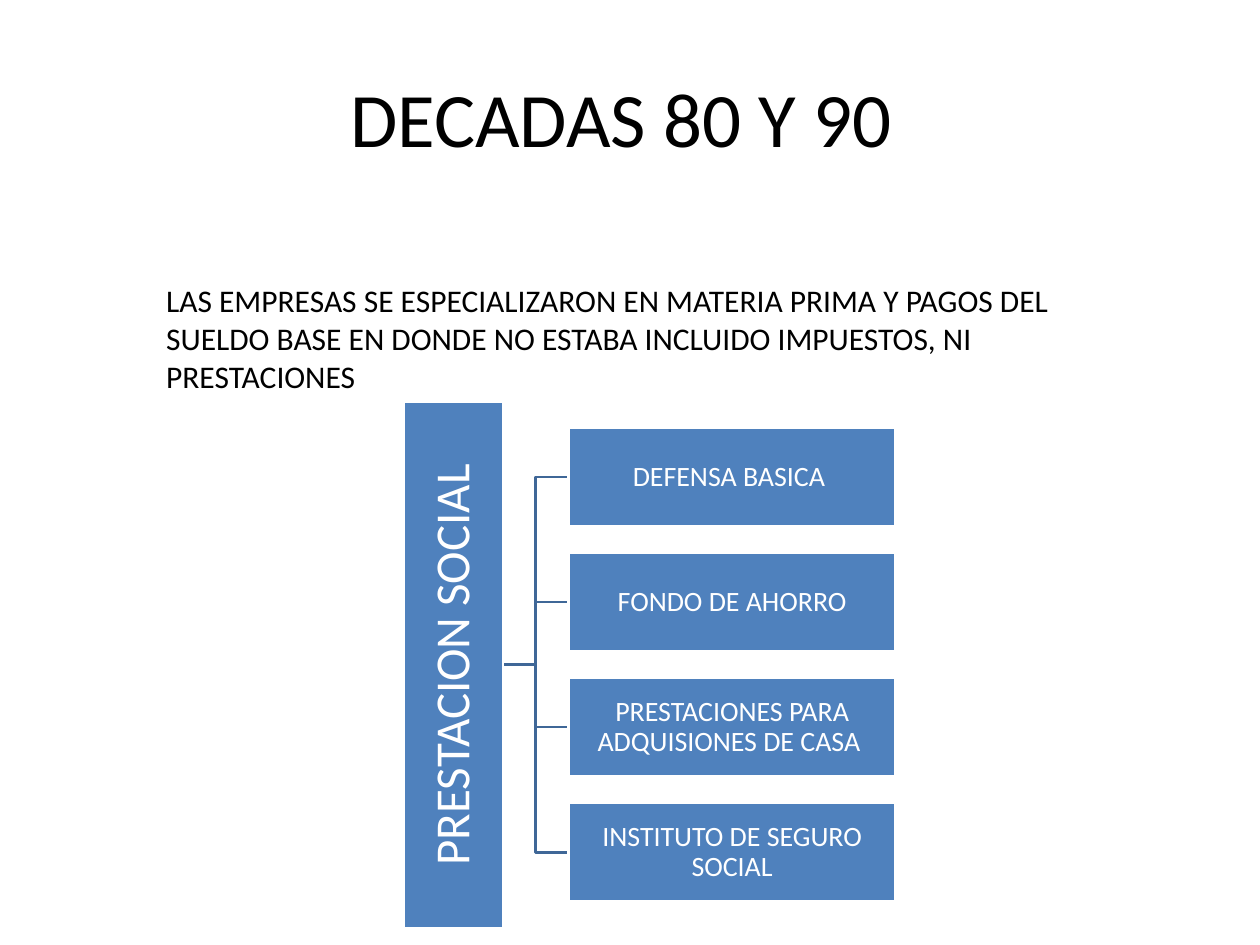
from pptx import Presentation
from pptx.dml.color import RGBColor
from pptx.enum.shapes import MSO_SHAPE
from pptx.enum.text import MSO_ANCHOR, PP_ALIGN
from pptx.util import Cm, Pt

RECTANGLE = MSO_SHAPE.RECTANGLE
TOP, MIDDLE = MSO_ANCHOR.TOP, MSO_ANCHOR.MIDDLE
LEFT, CENTER = PP_ALIGN.LEFT, PP_ALIGN.CENTER

FONT = "Calibri"
BLACK, WHITE, BLUE, DARK_BLUE = "000000", "FFFFFF", "4F81BD", "3F6797"
LINE_WIDTH = 1.5


def color(hex_code):
    return RGBColor.from_string(hex_code)


class SlideBuilder:
    def __init__(self, page):
        self.page = page

    def style_text(self, shape, text, size, hex_code, align, anchor):
        frame = shape.text_frame
        frame.text = text
        frame.word_wrap = True
        frame.vertical_anchor = anchor
        para = frame.paragraphs[0]
        para.alignment = align
        span = para.runs[0]
        span.font.name = FONT
        span.font.size = Pt(size)
        span.font.color.rgb = color(hex_code)
        return frame

    def text(self, left, top, width, height, text, size, align=LEFT, anchor=TOP):
        box = self.page.shapes.add_textbox(Cm(left), Cm(top), Cm(width), Cm(height))
        self.style_text(box, text, size, BLACK, align, anchor)

    def block(self, left, top, width, height, text, size, inset, rotation=0):
        box = self.page.shapes.add_shape(
            RECTANGLE, Cm(left), Cm(top), Cm(width), Cm(height))
        box.rotation = rotation
        box.shadow.inherit = False
        box.fill.solid()
        box.fill.fore_color.rgb = color(BLUE)
        box.line.color.rgb = color(WHITE)
        box.line.width = Pt(LINE_WIDTH)
        frame = self.style_text(box, text, size, WHITE, CENTER, MIDDLE)
        frame.margin_left = frame.margin_right = Cm(inset)
        frame.margin_top = frame.margin_bottom = Cm(inset)
        frame.paragraphs[0].line_spacing = 0.9

    def elbow(self, start_x, start_y, end_x, end_y):
        middle_x = (start_x + end_x) / 2
        builder = self.page.shapes.build_freeform(Cm(start_x), Cm(start_y))
        corners = [(middle_x, start_y), (middle_x, end_y), (end_x, end_y)]
        builder.add_line_segments([(Cm(x), Cm(y)) for x, y in corners], close=False)
        link = builder.convert_to_shape()
        link.shadow.inherit = False
        link.fill.background()
        link.line.color.rgb = color(DARK_BLUE)
        link.line.width = Pt(LINE_WIDTH)


def main():
    deck = Presentation()
    deck.slide_width, deck.slide_height = Cm(25.4), Cm(19.05)
    slide = SlideBuilder(deck.slides.add_slide(deck.slide_layouts[6]))

    # Title and introduction
    slide.text(1.27, 0.76, 22.86, 3.18, "DECADAS 80 Y 90 ", 44, CENTER, MIDDLE)
    slide.text(3.1, 5.54, 19.6, 2.57,
               "LAS EMPRESAS SE ESPECIALIZARON EN MATERIA PRIMA Y PAGOS DEL "
               "SUELDO BASE EN DONDE NO ESTABA INCLUIDO IMPUESTOS, NI PRESTACIONES", 18)

    # Hierarchy measures
    benefits = ["DEFENSA BASICA ", "FONDO DE AHORRO",
                "PRESTACIONES PARA ADQUISIONES DE CASA ",
                "INSTITUTO DE SEGURO SOCIAL"]
    block_height, root_length = 2.0, 10.62
    root_x, root_y = 9.14, 13.4
    branch_left, branch_width, pitch = 11.46, 6.6, 2.52
    first_y = root_y - pitch * (len(benefits) - 1) / 2
    branch_centers = [first_y + pitch * i for i in range(len(benefits))]

    # Links lie behind the blocks
    for center_y in reversed(branch_centers):
        slide.elbow(root_x + block_height / 2, root_y, branch_left, center_y)

    # Root, turned to read upwards
    slide.block(root_x - root_length / 2, root_y - block_height / 2,
                root_length, block_height, "PRESTACION SOCIAL", 28, 0.05, 270)

    # Branches
    for benefit, center_y in zip(benefits, branch_centers):
        slide.block(branch_left, center_y - block_height / 2,
                    branch_width, block_height, benefit, 16, 0.03)

    deck.save("out.pptx")


if __name__ == "__main__":
    main()
